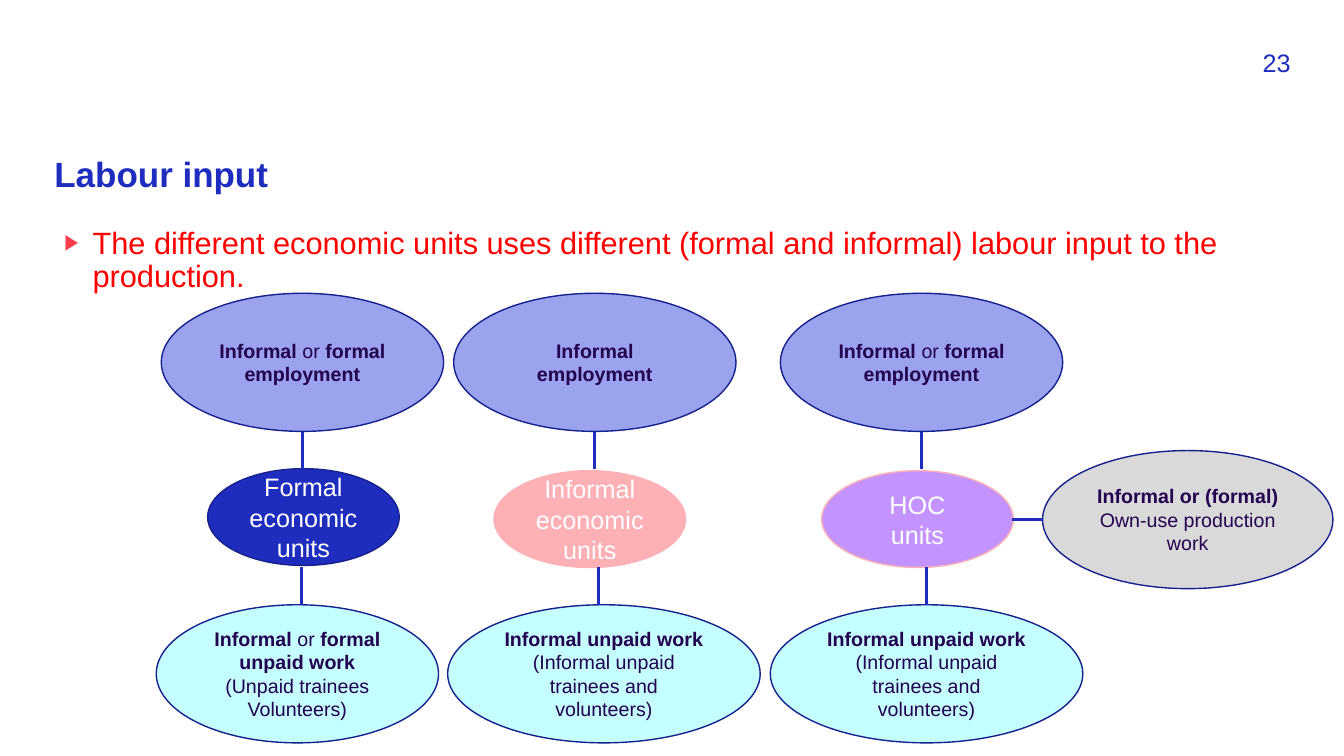
from dataclasses import dataclass

from lxml import etree
from pptx import Presentation
from pptx.dml.color import RGBColor
from pptx.enum.shapes import MSO_CONNECTOR, MSO_SHAPE
from pptx.enum.text import MSO_ANCHOR, PP_ALIGN
from pptx.oxml.ns import qn
from pptx.util import Inches, Pt

ELLIPSE = MSO_SHAPE.OVAL
STRAIGHT = MSO_CONNECTOR.STRAIGHT
MIDDLE = MSO_ANCHOR.MIDDLE
LEFT, CENTER, RIGHT = PP_ALIGN.LEFT, PP_ALIGN.CENTER, PP_ALIGN.RIGHT

BLUE = RGBColor(0x1E, 0x2D, 0xBE)
NAVY = RGBColor(0x16, 0x21, 0x8D)
PURPLE = RGBColor(0x23, 0x00, 0x50)
LAVENDER = RGBColor(0x9B, 0xA3, 0xEF)
CYAN = RGBColor(0xC5, 0xFE, 0xFE)
PINK = RGBColor(0xFD, 0xB1, 0xB7)
VIOLET = RGBColor(0xC3, 0x94, 0xFF)
GREY = RGBColor(0xD9, 0xD9, 0xD9)
RED = RGBColor(0xFF, 0x00, 0x00)
WHITE = RGBColor(0xFF, 0xFF, 0xFF)
BULLET_COLOR = "FA3C4B"

FONT = "Arial"
LABOUR_H, UNIT_W, UNIT_H = 1.37, 1.9, 0.96
EMPLOYMENT_Y, UNPAID_Y = 2.91, 6.0
EMPLOYMENT_W = 2.8
LINK = 0.37


@dataclass(frozen=True)
class Unit:
    name: str
    left: float
    top: float
    fill: RGBColor
    line: RGBColor
    employment: str
    employment_left: float
    unpaid: tuple[str, ...]
    unpaid_left: float
    unpaid_width: float
    upper_link: float
    lower_link: float


MIXED = "*Informal *or *formal employment*"
INFORMAL_UNPAID = ("*Informal unpaid work*", "(Informal unpaid trainees and", "volunteers)")
FORMAL_UNPAID = ("*Informal* or *formal unpaid work*", "(Unpaid trainees", "Volunteers)")

UNITS = (
    Unit("Formal economic units", 2.06, 4.65, BLUE, NAVY, MIXED, 1.6,
         FORMAL_UNPAID, 1.55, 2.8, 3.0, 2.99),
    Unit("Informal economic units", 4.9, 4.67, PINK, PINK, "*Informal employment*", 4.5,
         INFORMAL_UNPAID, 4.44, 3.1, 5.9, 5.94),
    Unit("HOC units", 8.15, 4.67, VIOLET, PINK, MIXED, 7.74,
         INFORMAL_UNPAID, 7.64, 3.1, 9.14, 9.19),
)


def add_text(slide, x: float, y: float, w: float, h: float, text: str, size: int,
             color: RGBColor, align=LEFT, bold: bool = False, inset: bool = False):
    tf = slide.shapes.add_textbox(Inches(x), Inches(y), Inches(w), Inches(h)).text_frame
    tf.word_wrap = True
    if not inset:
        tf.margin_left = tf.margin_right = tf.margin_top = tf.margin_bottom = 0
    tf.text = text
    p = tf.paragraphs[0]
    p.alignment = align
    font = p.runs[0].font
    font.name, font.size, font.bold = FONT, Pt(size), bold
    font.color.rgb = color
    return p


def add_bullet(p) -> None:
    pPr = p._p.get_or_add_pPr()
    pPr.set("marL", str(Inches(0.28)))
    pPr.set("indent", str(Inches(-0.28)))
    color = etree.SubElement(pPr, qn("a:buClr"))
    etree.SubElement(color, qn("a:srgbClr"), val=BULLET_COLOR)
    etree.SubElement(pPr, qn("a:buSzPct"), val="70000")
    etree.SubElement(pPr, qn("a:buFont"), typeface=FONT)
    etree.SubElement(pPr, qn("a:buChar"), char="▶")


def add_ellipse(slide, x: float, y: float, w: float, h: float, fill: RGBColor,
                line: RGBColor, lines: tuple[str, ...], size: int = 14,
                color: RGBColor = PURPLE) -> None:
    sp = slide.shapes.add_shape(ELLIPSE, Inches(x), Inches(y), Inches(w), Inches(h))
    sp.shadow.inherit = False
    sp.fill.solid()
    sp.fill.fore_color.rgb = fill
    sp.line.color.rgb = line
    sp.line.width = Pt(1)
    tf = sp.text_frame
    tf.word_wrap = True
    tf.vertical_anchor = MIDDLE
    for i, text in enumerate(lines):
        p = tf.add_paragraph() if i else tf.paragraphs[0]
        p.alignment = CENTER
        for j, part in enumerate(text.split("*")):
            if part:
                r = p.add_run()
                r.text = part
                r.font.name, r.font.size, r.font.bold = FONT, Pt(size), j % 2 == 1
                r.font.color.rgb = color


def add_link(slide, x1: float, y1: float, x2: float, y2: float) -> None:
    link = slide.shapes.add_connector(STRAIGHT, Inches(x1), Inches(y1), Inches(x2), Inches(y2))
    link.line.color.rgb = BLUE
    link.line.width = Pt(2.25)
    etree.SubElement(link._element.spPr, qn("a:effectLst"))


def add_unit(slide, unit: Unit) -> None:
    upper = EMPLOYMENT_Y + LABOUR_H
    add_ellipse(slide, unit.left, unit.top, UNIT_W, UNIT_H, unit.fill, unit.line,
                (unit.name,), 18, WHITE)
    add_link(slide, unit.upper_link, upper, unit.upper_link, upper + LINK)
    add_ellipse(slide, unit.employment_left, EMPLOYMENT_Y, EMPLOYMENT_W, LABOUR_H,
                LAVENDER, NAVY, (unit.employment,))
    add_ellipse(slide, unit.unpaid_left, UNPAID_Y, unit.unpaid_width, LABOUR_H,
                CYAN, NAVY, unit.unpaid)
    add_link(slide, unit.lower_link, UNPAID_Y - LINK, unit.lower_link, UNPAID_Y)


def main() -> None:
    prs = Presentation()
    prs.slide_width, prs.slide_height = Inches(13.33), Inches(7.5)
    slide = prs.slides.add_slide(prs.slide_layouts[6])

    title = add_text(slide, 0.54, 1.56, 12.26, 0.79, "Labour input", 25, BLUE, bold=True)
    title.line_spacing = 0.9
    add_text(slide, 12.21, 0.47, 0.59, 0.31, "23", 18, BLUE, RIGHT)
    claim = add_text(slide, 0.54, 2.21, 11.79, 1.37,
                     "The different economic units uses different (formal and informal) "
                     "labour input to the production.", 22, RED, inset=True)
    claim.line_spacing = 0.9
    add_bullet(claim)

    for unit in UNITS:
        add_unit(slide, unit)
    add_ellipse(slide, 10.34, 4.47, 2.88, LABOUR_H, GREY, NAVY,
                ("*Informal or (formal) *Own-use production work",))
    add_link(slide, 10.34, 5.15, 10.04, 5.15)

    prs.save("out.pptx")


if __name__ == "__main__":
    main()
